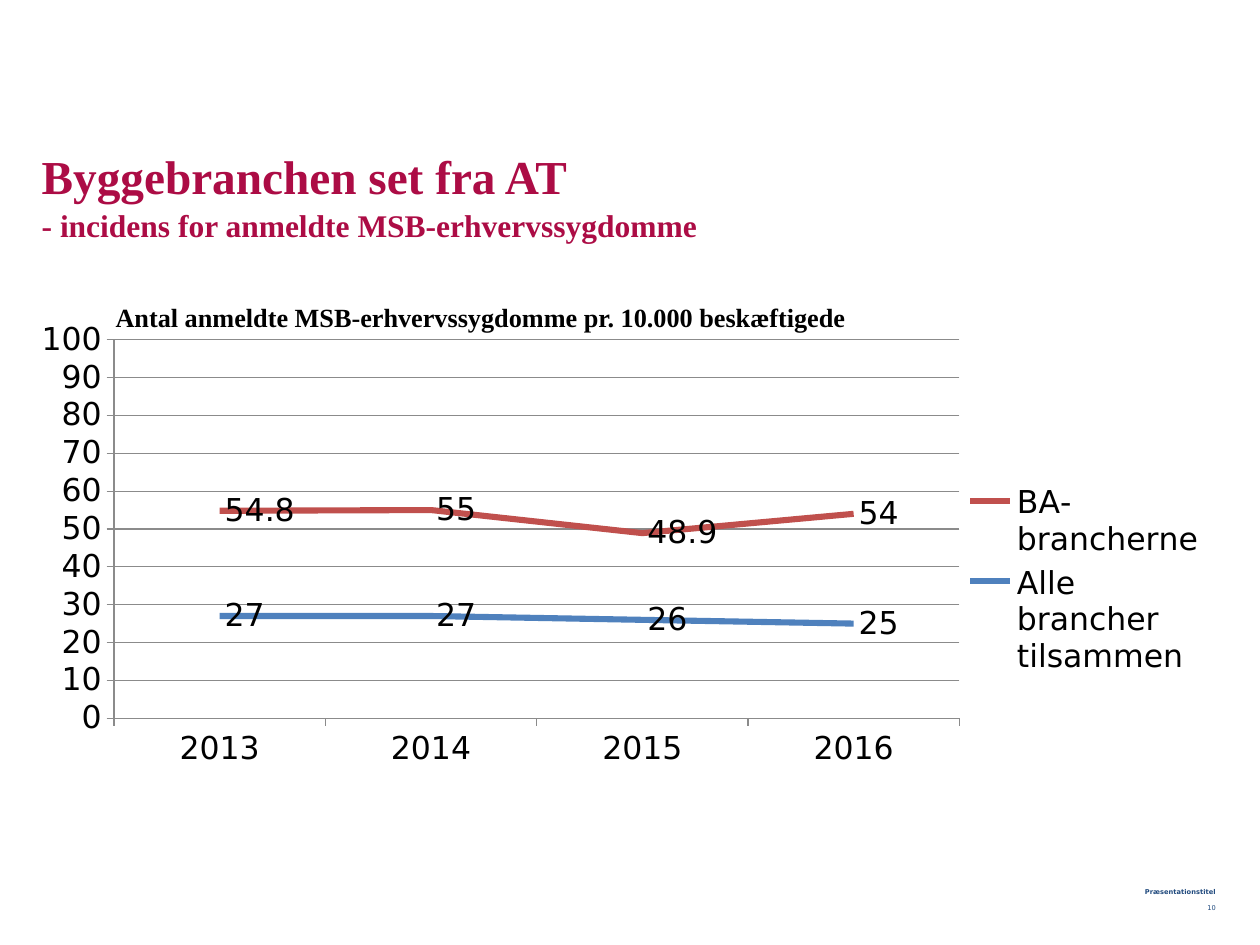
from lxml import etree
from pptx import Presentation
from pptx.chart.data import CategoryChartData
from pptx.dml.color import RGBColor
from pptx.enum.chart import XL_CHART_TYPE, XL_LABEL_POSITION, XL_LEGEND_POSITION, XL_MARKER_STYLE, XL_TICK_MARK
from pptx.enum.text import MSO_ANCHOR, MSO_AUTO_SIZE, PP_ALIGN
from pptx.oxml.ns import qn
from pptx.util import Cm, Pt

LINE = XL_CHART_TYPE.LINE
LABEL_RIGHT = XL_LABEL_POSITION.RIGHT
LEGEND_RIGHT = XL_LEGEND_POSITION.RIGHT
NO_MARKER = XL_MARKER_STYLE.NONE
TICK_OUT = XL_TICK_MARK.OUTSIDE
TOP, MIDDLE, BOTTOM = MSO_ANCHOR.TOP, MSO_ANCHOR.MIDDLE, MSO_ANCHOR.BOTTOM
NO_FIT = MSO_AUTO_SIZE.NONE
LEFT, RIGHT = PP_ALIGN.LEFT, PP_ALIGN.RIGHT

COLORS = {
    "title": "AC0C45",
    "text": "000000",
    "footer": "1F497D",
    "grid": "8B8B8B",
    "construction": "C0504D",
    "all": "4F81BD",
}
SERIF, SANS = "Times New Roman", "DejaVu Sans"
TITLE_LAYOUT = 5


class SlideBuilder:
    def __init__(self, deck):
        self.slide = deck.slides.add_slide(deck.slide_layouts[TITLE_LAYOUT])

    def color(self, name):
        return RGBColor.from_string(COLORS[name])

    def style(self, font, size, color, face, bold=False):
        font.size, font.name, font.bold = Pt(size), face, bold
        font.color.rgb = self.color(color)

    def frame(self, box, anchor):
        frame = box.text_frame
        frame.margin_left = frame.margin_right = 0
        frame.margin_top = frame.margin_bottom = 0
        frame.word_wrap, frame.auto_size = True, NO_FIT
        frame.vertical_anchor = anchor
        return frame

    def title(self, heading, subtitle, left, top, width, height):
        box = self.slide.shapes.title
        box.left, box.top, box.width, box.height = Cm(left), Cm(top), Cm(width), Cm(height)
        para = self.frame(box, MIDDLE).paragraphs[0]
        para.alignment, para.line_spacing = LEFT, 1.04
        self.style(para.font, 18, "title", SERIF, bold=True)
        span = para.add_run()
        span.text = heading
        span.font.size = Pt(27)
        para.add_line_break()
        para.add_run().text = subtitle

    def text(self, words, left, top, width, height, size, color, face, bold=False, align=LEFT, anchor=TOP):
        box = self.slide.shapes.add_textbox(Cm(left), Cm(top), Cm(width), Cm(height))
        para = self.frame(box, anchor).paragraphs[0]
        para.text, para.alignment = words, align
        self.style(para.font, size, color, face, bold)
        return para

    def footer(self, words, top, bold=False):
        para = self.text(words, 19.18, top, 5.33, 0.51, 3.8, "footer", SANS, bold, RIGHT, BOTTOM)
        para.line_spacing, para.space_after = 1.04, Pt(2.2)

    def line_chart(self, categories, series, left, top, width, height, plot_area, legend_area):
        data = CategoryChartData()
        data.categories = categories
        for name, values, _ in series:
            data.add_series(name, values)
        chart = self.slide.shapes.add_chart(
            LINE, Cm(left), Cm(top), Cm(width), Cm(height), data).chart
        self.style(chart.font, 18, "text", SANS)
        chart.has_title = False
        chart.has_legend = True
        chart.legend.position = LEGEND_RIGHT
        chart.legend.include_in_layout = False

        # Axes
        values_axis = chart.value_axis
        values_axis.minimum_scale, values_axis.maximum_scale = 0, 100
        values_axis.major_unit = 10
        values_axis.has_major_gridlines = True
        for axis in (chart.category_axis, values_axis):
            axis.major_tick_mark = TICK_OUT
        for ruled in (chart.category_axis, values_axis, values_axis.major_gridlines):
            ruled.format.line.color.rgb = self.color("grid")

        # Lines and value labels
        plot = chart.plots[0]
        plot.vary_by_categories = False
        for line, (_, _, color) in zip(plot.series, series):
            line.smooth = False
            line.marker.style = NO_MARKER
            line.format.line.color.rgb = self.color(color)
            line.format.line.width = Pt(3.5)
            labels = line.data_labels
            labels.show_value = True
            labels.position = LABEL_RIGHT

        self.place(chart, "c:plotArea", plot_area, [("layoutTarget", "inner")])
        self.place(chart, "c:legend", legend_area)

    def place(self, chart, part, area, settings=()):
        """Give a chart part a fixed place, in shares of the chart."""
        parent = chart.element.find(".//" + qn(part))
        for old in parent.findall(qn("c:layout")):
            parent.remove(old)
        layout = etree.Element(qn("c:layout"))
        position = parent.find(qn("c:legendPos"))
        if position is None:
            parent.insert(0, layout)
        else:
            position.addnext(layout)
        manual = etree.SubElement(layout, qn("c:manualLayout"))
        for tag, value in [*settings, ("xMode", "edge"), ("yMode", "edge"), *zip("xywh", area)]:
            etree.SubElement(manual, qn("c:" + tag)).set("val", str(value))


def main():
    deck = Presentation()
    deck.slide_width, deck.slide_height = Cm(25.4), Cm(19.05)
    page = SlideBuilder(deck)

    # Footer
    page.footer("Præsentationstitel", 17.55, bold=True)
    page.footer("10", 17.88)

    # Title
    page.title("Byggebranchen set fra AT", "- incidens for anmeldte MSB-erhvervssygdomme",
               0.84, 2.92, 13.26, 2)

    # Chart and its caption
    series = [
        ("BA-brancherne", (54.8, 55, 48.9, 54), "construction"),
        ("Alle brancher tilsammen", (27, 27, 26, 25), "all"),
    ]
    page.line_chart(("2013", "2014", "2015", "2016"), series, 0.62, 6.48, 24, 8.99,
                    plot_area=(0.07, 0.04, 0.71, 0.85), legend_area=(0.78, 0.35, 0.21, 0.46))
    page.text("Antal anmeldte MSB-erhvervssygdomme pr. 10.000 beskæftigede",
              2.33, 6.07, 16.48, 0.64, 15, "text", SERIF, bold=True)

    deck.save("out.pptx")


if __name__ == "__main__":
    main()
